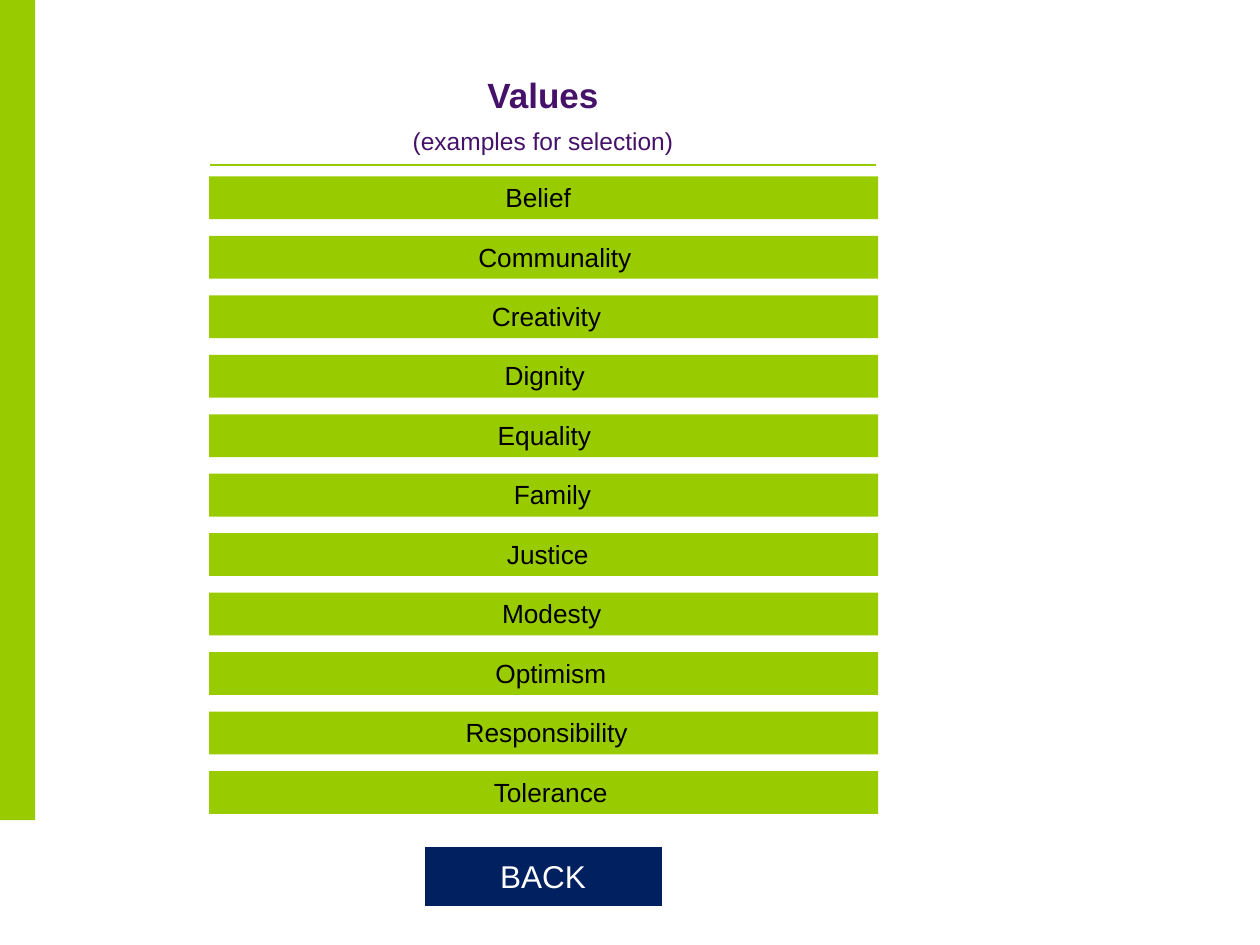
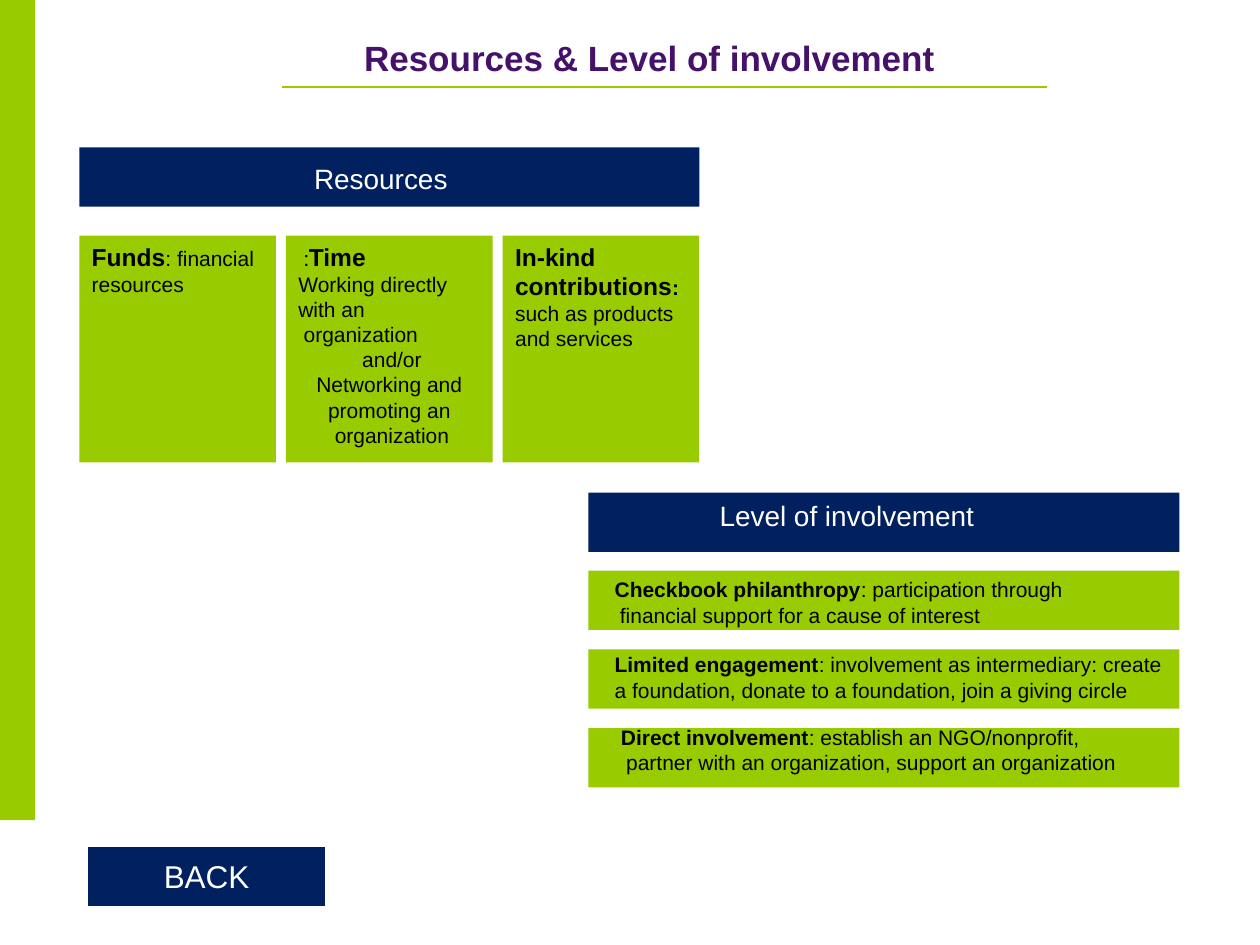
import collections
import dataclasses

import lxml.etree
import pptx
import pptx.dml.color
import pptx.enum.shapes
import pptx.enum.text
import pptx.oxml.ns
import pptx.util

Inches = pptx.util.Inches
Align = pptx.enum.text.PP_ALIGN
Anchor = pptx.enum.text.MSO_ANCHOR
Shape = pptx.enum.shapes.MSO_SHAPE
Box = collections.namedtuple("Box", "left top width height")


@dataclasses.dataclass(frozen=True)
class Theme:
    """Colours, font and type sizes shared by the pages."""
    font: str = "Arial"
    green: str = "99CC00"
    navy: str = "002060"
    purple: str = "461169"
    black: str = "000000"
    white: str = "FFFFFF"
    title: int = 20
    button: int = 18
    header: int = 16
    label: int = 15
    lead: int = 14
    body: int = 12


THEME = Theme()


@dataclasses.dataclass(frozen=True)
class Span:
    """A stretch of text in one style."""
    text: str
    size: int = THEME.body
    bold: bool = False
    color: str = THEME.black


@dataclasses.dataclass(frozen=True)
class Para:
    """A paragraph made of spans."""
    spans: tuple
    align: Align = Align.LEFT
    before: int = 0
    right_to_left: bool = False


def rgb(color):
    """Turn a hex string into a colour."""
    return pptx.dml.color.RGBColor.from_string(color)


def write(shape, paras, anchor=Anchor.TOP):
    """Fill a shape with paragraphs, run by run."""
    frame = shape.text_frame
    frame.word_wrap = True
    frame.vertical_anchor = anchor
    for index, content in enumerate(paras):
        para = frame.add_paragraph() if index else frame.paragraphs[0]
        para.alignment = content.align
        if content.before:
            para.space_before = pptx.util.Pt(content.before)
        if content.right_to_left:
            para._p.get_or_add_pPr().set("rtl", "1")
        for span in content.spans:
            run = para.add_run()
            run.text = span.text
            run.font.name = THEME.font
            run.font.size = pptx.util.Pt(span.size)
            run.font.bold = span.bold
            run.font.color.rgb = rgb(span.color)


def add_block(page, box, color, kind=Shape.RECTANGLE):
    """Add a flat filled shape."""
    block = page.shapes.add_shape(kind, *map(Inches, box))
    block.shadow.inherit = False
    block.fill.solid()
    block.fill.fore_color.rgb = rgb(color)
    block.line.fill.background()
    return block


def add_text(page, box, paras, anchor=Anchor.TOP):
    """Add a wrapped text box."""
    write(page.shapes.add_textbox(*map(Inches, box)), paras, anchor)


def add_title(page, box, paras, rule):
    """Add a centred title and the thin rule under it."""
    left, right, height = rule
    line = page.shapes.add_connector(
        pptx.enum.shapes.MSO_CONNECTOR.STRAIGHT,
        Inches(left), Inches(height), Inches(right), Inches(height))
    line.line.color.rgb = rgb(THEME.green)
    line.line.width = pptx.util.Pt(0.75)
    lxml.etree.SubElement(line._element.spPr, pptx.oxml.ns.qn("a:effectLst"))
    add_text(page, box, paras, Anchor.MIDDLE)


def add_back_button(page, left):
    """Add the BACK button at the foot of the page."""
    button = add_block(page, Box(left, 6.72, 1.88, 0.47), THEME.navy,
                       Shape.ACTION_BUTTON_CUSTOM)
    write(button, [Para((Span("BACK", THEME.button, color=THEME.white),),
                        Align.CENTER)], Anchor.MIDDLE)


def add_header(page, box, text, label):
    """Add a navy header bar with a label placed relative to it."""
    add_block(page, box, THEME.navy)
    place = Box(box.left + label.left, box.top + label.top, label.width, label.height)
    add_text(page, place, [Para((Span(text, THEME.header, color=THEME.white),),
                                Align.RIGHT)])


def add_value_bars(page, box, values):
    """Stack equal bars, each with a label ending at its own offset."""
    bar_height = 0.34
    pitch = (box.height - bar_height) / (len(values) - 1)
    for index, (value, offset, width) in enumerate(values):
        top = box.top + index * pitch
        add_block(page, Box(box.left, top, box.width, bar_height), THEME.green)
        add_text(page, Box(box.left + offset, top - 0.01, width, 0.35),
                 [Para((Span(value, THEME.label),), Align.RIGHT)])


def add_resource_cards(page, box, cards):
    """Set cards side by side, filling the box with equal gaps."""
    gap = (box.width - sum(width for width, paras in cards)) / (len(cards) - 1)
    left = box.left
    for width, paras in cards:
        card = add_block(page, Box(left, box.top, width, box.height), THEME.green)
        write(card, paras)
        left += width + gap


def add_involvement_bars(page, box, levels):
    """Stack bars evenly, each with a note placed relative to it."""
    bar_height = 0.47
    pitch = (box.height - bar_height) / (len(levels) - 1)
    for index, (lead, rest, shift, rise, width) in enumerate(levels):
        top = box.top + index * pitch
        add_block(page, Box(box.left, top, box.width, bar_height), THEME.green)
        add_text(page, Box(box.left + shift, top - rise, width, 0.5),
                 [Para((Span(lead, bold=True), Span(rest)), right_to_left=True)])


def add_page(deck):
    """Add a blank page with the green side band."""
    page = deck.slides.add_slide(deck.slide_layouts[6])
    add_block(page, Box(0, 0, 0.28, 6.51), THEME.green)
    return page


def build_values(deck):
    """Build the page that lists the values."""
    page = add_page(deck)
    add_title(page, Box(3.14, 0.52, 2.34, 0.77), [
        Para((Span("Values", THEME.title, True, THEME.purple),), Align.CENTER),
        Para((Span("(examples for selection)", THEME.lead, color=THEME.purple),),
             Align.CENTER, before=6),
    ], (1.67, 6.95, 1.31))
    add_value_bars(page, Box(1.66, 1.4, 5.31, 5.06), [
        ("Belief", 2.16, 0.81),
        ("Communality", 1.85, 1.6),
        ("Creativity", 2.08, 1.13),
        ("Dignity", 2.22, 0.86),
        ("Equality", 2.16, 0.97),
        ("Family", 2.17, 0.96),
        ("Justice", 2.18, 0.93),
        ("Modesty", 2.09, 1.12),
        ("Optimism", 2.05, 1.2),
        ("Responsibility", 1.89, 1.53),
        ("Tolerance", 2.04, 1.22),
    ])
    add_back_button(page, 3.37)


def build_resources(deck):
    """Build the page on resources and level of involvement."""
    page = add_page(deck)
    add_title(page, Box(1.56, 0.24, 7.19, 0.44), [
        Para((Span("Resources & Level of involvement", THEME.title, True,
                   THEME.purple),), Align.CENTER),
    ], (2.24, 8.31, 0.69))
    add_header(page, Box(0.63, 1.17, 4.92, 0.47), "Resources",
               Box(1.2, 0.06, 1.82, 0.37))
    add_resource_cards(page, Box(0.63, 1.87, 4.92, 1.8), [
        (1.56, [Para((Span("Funds", THEME.lead, True),
                      Span(": financial resources")))]),
        (1.64, [Para((Span("Time", THEME.lead, True), Span(": ")),
                     right_to_left=True),
                Para((Span("Working directly with an organization "),),
                     right_to_left=True),
                Para((Span("and/or "),), Align.CENTER, right_to_left=True),
                Para((Span("Networking and promoting an organization "),),
                     Align.CENTER, right_to_left=True)]),
        (1.56, [Para((Span("In-kind contributions", THEME.lead, True),
                      Span(": ", bold=True),
                      Span("such as products and services")))]),
    ])
    add_header(page, Box(4.67, 3.91, 4.69, 0.47), "Level of involvement",
               Box(0.1, 0, 3.06, 0.37))
    add_involvement_bars(page, Box(4.67, 4.53, 4.69, 1.72), [
        ("Checkbook philanthropy",
         ": participation through financial support for a cause of interest ",
         0.11, 0, 4.25),
        ("Limited engagement",
         ": involvement as intermediary: create a foundation, "
         "donate to a foundation, join a giving circle",
         0.11, 0.03, 4.6),
        ("Direct involvement",
         ": establish an NGO/nonprofit, partner with an organization, "
         "support an organization ",
         0.16, 0.08, 4.34),
    ])
    add_back_button(page, 0.7)


def main():
    """Build and save the deck."""
    deck = pptx.Presentation()
    deck.slide_width, deck.slide_height = Inches(10), Inches(7.5)
    build_values(deck)
    build_resources(deck)
    deck.save("out.pptx")


if __name__ == "__main__":
    main()
